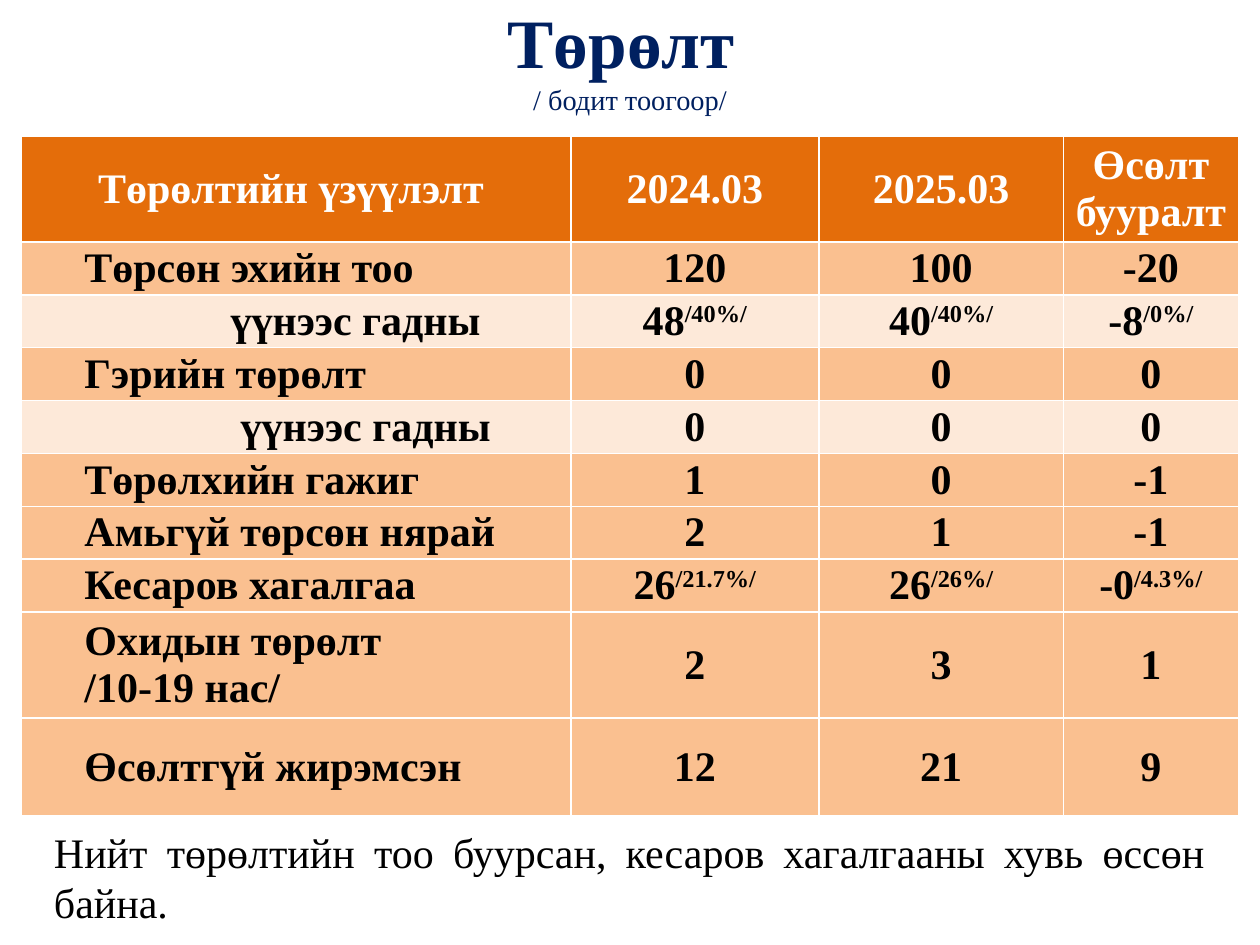
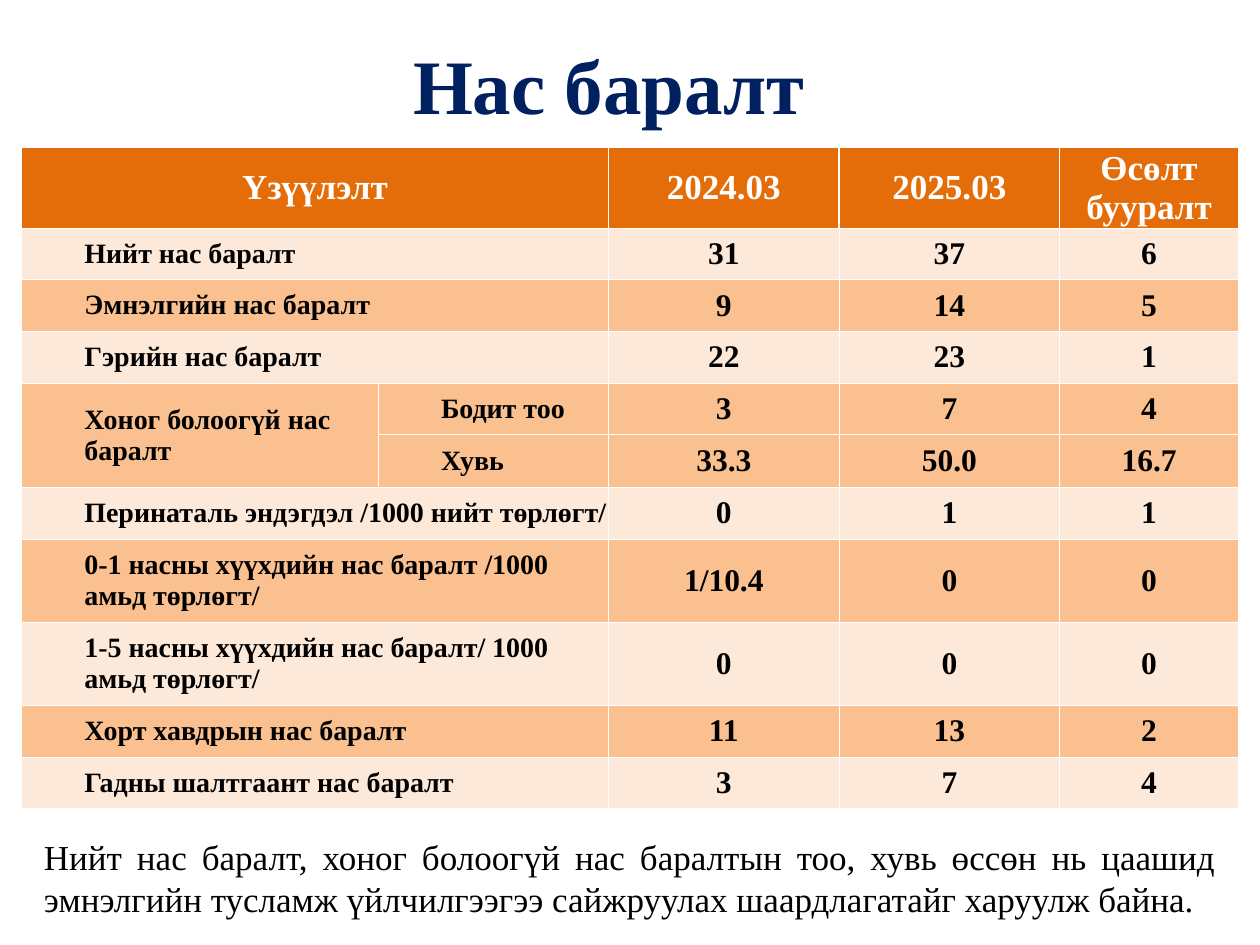
import pptx
import pptx.dml.color
import pptx.enum.text
import pptx.oxml
import pptx.oxml.ns
import pptx.util
from pptx.util import Inches

FONT = "Times New Roman"
NAVY, BLACK, WHITE = "002060", "000000", "FFFFFF"
HEADER_FILL = "E46D0A"
SHADES = {"D": "FAC090", "L": "FDE9D9"}
PERIODS = ["2024.03", "2025.03", "Өсөлт бууралт"]
LABEL_INDENT = 0.5
TITLE_ONLY = 5
ALIGN = pptx.enum.text.PP_ALIGN
MIDDLE = pptx.enum.text.MSO_ANCHOR.MIDDLE


def color(hex_code):
    return pptx.dml.color.RGBColor.from_string(hex_code)


def format_paragraph(p, size, hex_code, bold, align):
    p.alignment = align
    for r in p.runs:
        r.font.name = FONT
        r.font.size = pptx.util.Pt(size)
        r.font.bold = bold
        r.font.color.rgb = color(hex_code)


def add_title(s, box, lines):
    """Place the title; lines holds (text, size, bold) for each line."""
    sp = s.shapes.title
    sp.left, sp.top, sp.width, sp.height = [Inches(n) for n in box]
    tf = sp.text_frame
    tf.auto_size = pptx.enum.text.MSO_AUTO_SIZE.NONE
    tf.vertical_anchor = MIDDLE
    tf.text = "\n".join(text for text, _, _ in lines)
    for p, (_, size, bold) in zip(tf.paragraphs, lines):
        format_paragraph(p, size, NAVY, bold, ALIGN.CENTER)


def add_conclusion(s, box, text, size):
    tf = s.shapes.add_textbox(*[Inches(n) for n in box]).text_frame
    tf.word_wrap = True
    tf.text = text
    format_paragraph(tf.paragraphs[0], size, BLACK, False, ALIGN.JUSTIFY)


def set_borders(cell, widths):
    """Draw white borders; widths maps the sides L, R, T, B to points."""
    tc_pr = cell._tc.get_or_add_tcPr()
    for side in "LRTB":
        ln = pptx.oxml.parse_xml(
            f'<a:ln{side} {pptx.oxml.ns.nsdecls("a")} w="{pptx.util.Pt(widths[side])}">'
            f'<a:solidFill><a:srgbClr val="{WHITE}"/></a:solidFill></a:ln{side}>')
        tc_pr.append(ln)


def fill_cell(cell, fill, borders):
    cell.margin_left = cell.margin_right = cell.margin_top = cell.margin_bottom = 0
    cell.vertical_anchor = MIDDLE
    set_borders(cell, borders)
    cell.fill.solid()
    cell.fill.fore_color.rgb = color(fill)


def write_centered(cell, text, size, hex_code):
    """Write a value; what follows ^ is raised."""
    value, _, share = text.partition("^")
    p = cell.text_frame.paragraphs[0]
    p.text = value
    if share:
        r = p.add_run()
        r.text = share
        r.font._element.set("baseline", "30000")
    format_paragraph(p, size, hex_code, True, ALIGN.CENTER)


def write_label(cell, text, size, indent):
    cell.text_frame.text = text
    for p in cell.text_frame.paragraphs:
        format_paragraph(p, size, BLACK, True, ALIGN.LEFT)
        p_pr = p._p.get_or_add_pPr()
        p_pr.set("marL", str(Inches(indent)))
        p_pr.set("indent", "0")


def add_indicator_table(s, top, cols, heights, rows, shades, sizes, lines, indents=None):
    """Add a table of labels and values.

    sizes: header, label and value text; lines: header, header bottom and body.
    """
    header_size, label_size, value_size = sizes
    header_line, rule, body_line = lines
    frame = s.shapes.add_table(len(rows), len(cols), Inches(0.17), Inches(top),
                               Inches(sum(cols)), Inches(sum(heights)))
    table = frame.table
    for column, width in zip(table.columns, cols):
        column.width = Inches(width)
    for row, height in zip(table.rows, heights):
        row.height = Inches(height)

    label_cols = len(cols) - len(PERIODS)
    fills = [HEADER_FILL] + [SHADES[shade] for shade in shades]
    for i, texts in enumerate(rows):
        line = body_line if i else header_line
        borders = {"L": line, "R": line, "T": rule if i == 1 else line,
                   "B": line if i else rule}
        for j, text in enumerate(texts):
            cell = table.cell(i, j)
            fill_cell(cell, fills[i], borders)
            if not text:
                continue
            if i == 0:
                write_centered(cell, text, header_size, WHITE)
            elif j < label_cols:
                write_label(cell, text, label_size, (indents or {}).get(i, LABEL_INDENT))
            else:
                write_centered(cell, text, value_size, BLACK)
    return table


def merge_labels(table, rows):
    """Join an empty second label to the left, an empty first label upwards."""
    for i, (first, second, *_) in enumerate(rows):
        if not second:
            table.cell(i, 0).merge(table.cell(i, 1))
        elif not first:
            table.cell(i - 1, 0).merge(table.cell(i, 0))


def add_births(prs):
    s = prs.slides.add_slide(prs.slide_layouts[TITLE_ONLY])
    add_title(s, (0.5, 0, 9, 0.92),
              [("Төрөлт ", 39.6, True), ("/ бодит тоогоор/", 16.2, False)])
    rows = [
        ["Төрөлтийн үзүүлэлт ", *PERIODS],
        ["Төрсөн эхийн тоо", "120", "100", "-20"],
        ["үүнээс гадны", "48^/40%/", "40^/40%/", "-8^/0%/"],
        ["Гэрийн төрөлт", "0", "0", "0"],
        ["үүнээс гадны", "0", "0", "0"],
        ["Төрөлхийн гажиг", "1", "0", "-1"],
        ["Амьгүй төрсөн нярай", "2", "1", "-1"],
        ["Кесаров хагалгаа", "26^/21.7%/", "26^/26%/", "-0^/4.3%/"],
        ["Охидын төрөлт\n/10-19 нас/", "2", "3", "1"],
        ["Өсөлтгүй жирэмсэн", "12", "21", "9"],
    ]
    add_indicator_table(s, 1.08, [4.36, 1.97, 1.94, 1.39],
                        [0.84] + [0.42] * 7 + [0.84, 0.78], rows, "DLDLDDDDD",
                        sizes=(24, 24, 24), lines=(1, 1.5, 1),
                        indents={2: 1.66, 4: 1.74})
    add_conclusion(s, (0.33, 6.51, 9.33, 0.91),
                   "Нийт төрөлтийн тоо буурсан, кесаров хагалгааны хувь өссөн байна.", 24)


def add_deaths(prs):
    s = prs.slides.add_slide(prs.slide_layouts[TITLE_ONLY])
    add_title(s, (0.75, 0.25, 8.17, 0.83), [("Нас баралт", 44, True)])
    rows = [
        ["Үзүүлэлт", "", *PERIODS],
        ["Нийт нас баралт", "", "31", "37", "6"],
        ["Эмнэлгийн нас баралт", "", "9", "14", "5"],
        ["Гэрийн нас баралт", "", "22", "23", "1"],
        ["Хоног болоогүй нас баралт", "Бодит тоо", "3", "7", "4"],
        ["", "Хувь", "33.3", "50.0", "16.7"],
        ["Перинаталь эндэгдэл /1000 нийт төрлөгт/", "", "0", "1", "1"],
        ["0-1 насны хүүхдийн нас баралт /1000 амьд төрлөгт/", "", "1/10.4", "0", "0"],
        ["1-5 насны хүүхдийн нас баралт/ 1000 амьд төрлөгт/", "", "0", "0", "0"],
        ["Хорт хавдрын нас баралт", "", "11", "13", "2"],
        ["Гадны шалтгаант нас баралт", "", "3", "7", "4"],
    ]
    table = add_indicator_table(
        s, 1.17, [2.83, 1.83, 1.83, 1.75, 1.42],
        [0.64] + [0.41] * 4 + [0.42, 0.41, 0.66, 0.66, 0.41, 0.41], rows, "LDLDDLDLDL",
        sizes=(20, 16, 18), lines=(1, 0.5, 0.5))
    merge_labels(table, rows)
    add_conclusion(s, (0.25, 6.58, 9.5, 0.77),
                   "Нийт нас баралт, хоног болоогүй нас баралтын тоо, хувь өссөн нь цаашид "
                   "эмнэлгийн тусламж үйлчилгээгээ сайжруулах шаардлагатайг харуулж байна.", 20)


def main():
    prs = pptx.Presentation()
    prs.slide_width, prs.slide_height = Inches(10), Inches(7.5)
    add_births(prs)
    add_deaths(prs)
    prs.save("out.pptx")


if __name__ == "__main__":
    main()
